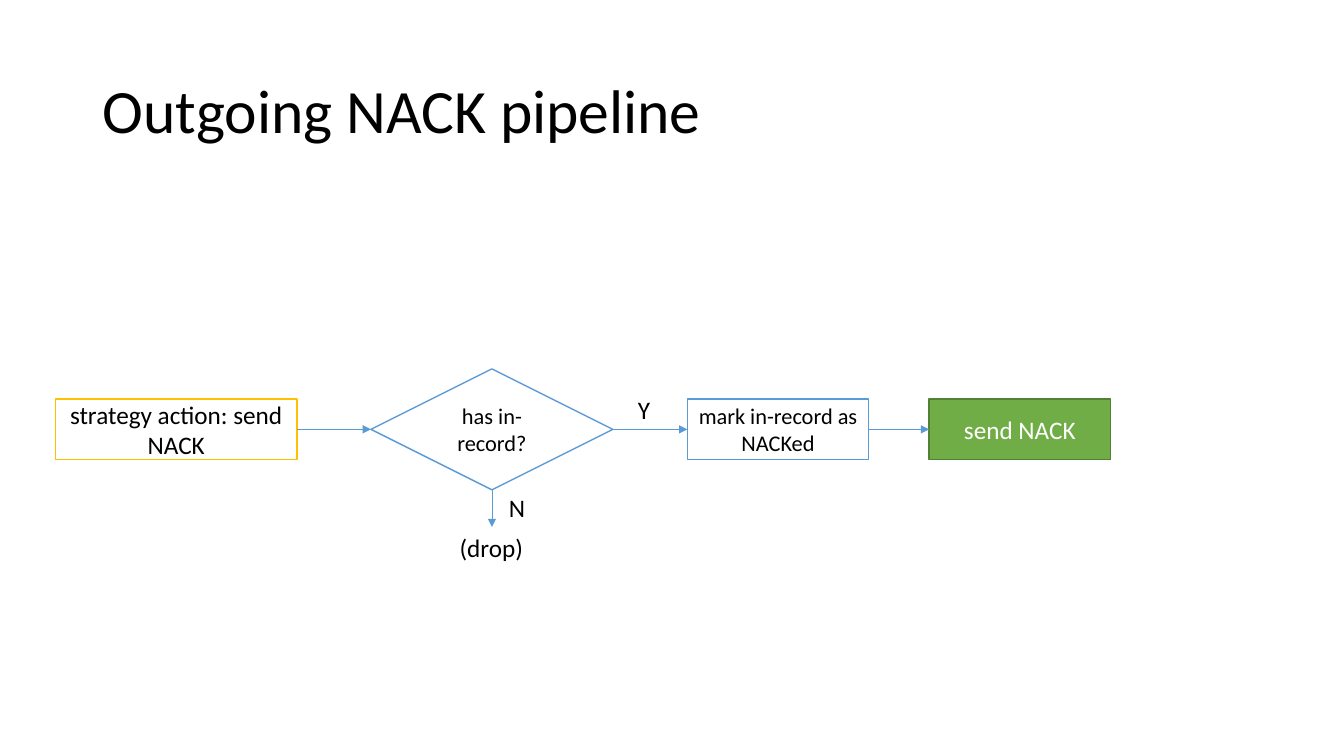
from dataclasses import dataclass

from lxml import etree
from pptx import Presentation
from pptx import util as u
from pptx.dml.color import RGBColor
from pptx.enum import shapes, text
from pptx.oxml.ns import qn


@dataclass(frozen=True)
class Theme:
    font: str = "Calibri"
    black: str = "000000"
    white: str = "FFFFFF"
    blue: str = "5B9BD5"
    amber: str = "FFC000"
    green: str = "70AD47"
    dark_green: str = "538035"
    title_size: int = 44
    body_size: int = 18
    small_size: int = 16


theme = Theme()
SHAPE = shapes.MSO_SHAPE
ANCHOR = text.MSO_ANCHOR
TOP, LEFT, BOTTOM, RIGHT = range(4)


def write(shape, wording, size, color, frame_format, paragraph_format):
    """Fill the shape's single paragraph and apply the format values."""
    frame = shape.text_frame
    paragraph = frame.paragraphs[0]
    run = paragraph.add_run()
    run.text = wording
    font_format = {"name": theme.font, "size": u.Pt(size)}
    for target, values in (
        (frame, frame_format),
        (paragraph, paragraph_format),
        (run.font, font_format),
    ):
        for name, value in values.items():
            setattr(target, name, value)
    run.font.color.rgb = RGBColor.from_string(color)


def add_arrow(start, start_side, end, end_side):
    arrow = slide.shapes.add_connector(shapes.MSO_CONNECTOR.STRAIGHT, 0, 0, 0, 0)
    arrow.begin_connect(start, start_side)
    arrow.end_connect(end, end_side)
    arrow.line.color.rgb = RGBColor.from_string(theme.blue)
    arrow.line.width = u.Pt(0.5)
    etree.SubElement(arrow.line._get_or_add_ln(), qn("a:tailEnd"), type="triangle")
    etree.SubElement(arrow._element.spPr, qn("a:effectLst"))


presentation = Presentation()
presentation.slide_width = u.Pt(960)
presentation.slide_height = u.Pt(540)
slide = presentation.slides.add_slide(presentation.slide_layouts[6])

# Title
title = slide.shapes.add_textbox(u.Pt(66), u.Pt(28.75), u.Pt(828), u.Pt(104.4))
write(title, "Outgoing NACK pipeline", theme.title_size, theme.black,
      {"word_wrap": True, "vertical_anchor": ANCHOR.MIDDLE}, {"line_spacing": 0.9})

# Pipeline steps, all centred on one horizontal axis
axis = 306.7
steps = [
    # wording, preset, left, width, height, fill, outline, text colour, text size
    ("strategy action: send NACK", SHAPE.RECTANGLE, 39.5, 172.8, 43.2,
     theme.white, theme.amber, theme.black, theme.body_size),
    ("has in-record?", SHAPE.FLOWCHART_DECISION, 265, 172.8, 86.4,
     theme.white, theme.blue, theme.black, theme.small_size),
    ("mark in-record as NACKed", SHAPE.RECTANGLE, 491, 129.6, 43.2,
     theme.white, theme.blue, theme.black, theme.small_size),
    ("send NACK", SHAPE.RECTANGLE, 663.7, 129.6, 43.2,
     theme.green, theme.dark_green, theme.white, theme.body_size),
]
step_shapes = []
for wording, preset, left, width, height, fill, outline, color, size in steps:
    step = slide.shapes.add_shape(
        preset, u.Pt(left), u.Pt(axis - height / 2), u.Pt(width), u.Pt(height))
    step.shadow.inherit = False
    step.fill.solid()
    step.fill.fore_color.rgb = RGBColor.from_string(fill)
    step.line.color.rgb = RGBColor.from_string(outline)
    step.line.width = u.Pt(1)
    write(step, wording, size, color,
          {"word_wrap": True, "vertical_anchor": ANCHOR.MIDDLE},
          {"alignment": text.PP_ALIGN.CENTER})
    step_shapes.append(step)

# Branch labels and the dropped outcome
labels = {}
for wording, left, top, width in [
    ("(drop)", 321.2, 376.5, 60.4),
    ("N", 356.4, 347.8, 25.9),
    ("Y", 448.6, 277.9, 23),
]:
    label = slide.shapes.add_textbox(u.Pt(left), u.Pt(top), u.Pt(width), u.Pt(29.1))
    write(label, wording, theme.body_size, theme.black,
          {"word_wrap": False, "auto_size": text.MSO_AUTO_SIZE.SHAPE_TO_FIT_TEXT}, {})
    labels[wording] = label

# Arrows
for start, end in zip(step_shapes, step_shapes[1:]):
    add_arrow(start, RIGHT, end, LEFT)
decision = step_shapes[1]
add_arrow(decision, BOTTOM, labels["(drop)"], TOP)

presentation.save("out.pptx")
